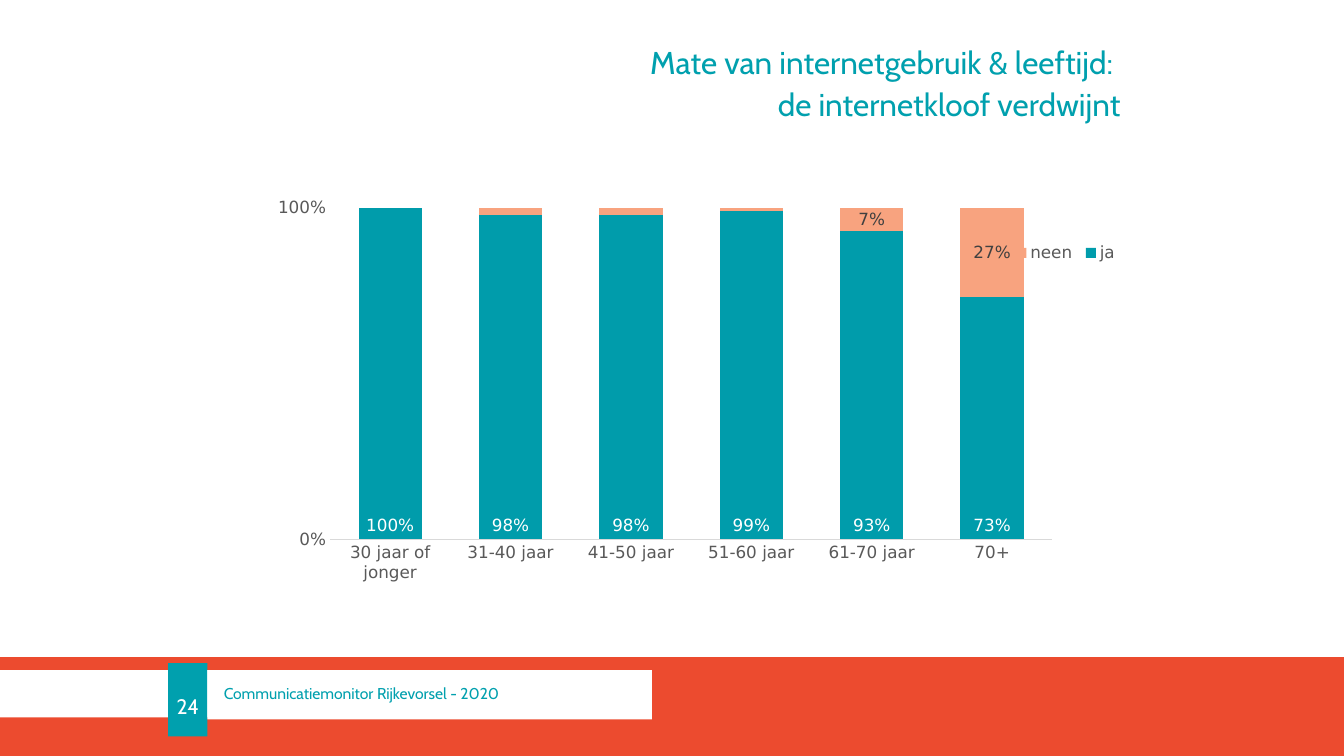
"""Builds the slide on internet use by age group."""
from lxml import etree
from pptx import Presentation
from pptx.chart.data import CategoryChartData
from pptx.dml.color import RGBColor
from pptx.enum.chart import XL_CHART_TYPE as CT, XL_LABEL_POSITION as LP
from pptx.enum.chart import XL_LEGEND_POSITION as LG, XL_TICK_MARK as TM
from pptx.enum.shapes import MSO_SHAPE as SH
from pptx.enum.text import MSO_ANCHOR as MA, PP_ALIGN as PA
from pptx.oxml.ns import qn
from pptx.util import Cm, Pt

TEAL, RED, WHITE, GREY = "00A0AE", "EC4B2F", "FFFFFF", "595959"
PERCENT = "###0%"


def rgb(value):
    return RGBColor.from_string(value)


def assign(target, values):
    for name, value in values.items():
        setattr(target, name, value)


def sub(parent, tag, **attrs):
    return etree.SubElement(parent, qn(tag), attrs)


class Deck:
    """Holds the style and the current slide."""

    def __init__(self, font, chart_font):
        self.font, self.chart_font = font, chart_font
        self.prs = Presentation()
        assign(self.prs, {"slide_width": Cm(33.87), "slide_height": Cm(19.05)})
        self.s = self.prs.slides.add_slide(self.prs.slide_layouts[6])

    def style(self, font, size, color, name=None):
        assign(font, {"size": Pt(size), "name": name or self.font, "bold": False})
        font.color.rgb = rgb(color)

    def fill_text(self, sp, lines, size, color, insets, anchor, wrap=True, **fmt):
        tf = sp.text_frame
        sides = ("margin_left", "margin_top", "margin_right", "margin_bottom")
        assign(tf, {side: Cm(v) for side, v in zip(sides, insets)})
        assign(tf, {"word_wrap": wrap, "vertical_anchor": anchor})
        for i, line in enumerate(lines):
            p = tf.add_paragraph() if i else tf.paragraphs[0]
            assign(p, fmt)
            if i:
                p.space_before = Pt(3)
            r = p.add_run()
            r.text = line
            self.style(r.font, size, color)

    def rect(self, box, color):
        sp = self.s.shapes.add_shape(SH.RECTANGLE, *map(Cm, box))
        sp.shadow.inherit = False
        sp.fill.solid()
        sp.fill.fore_color.rgb = rgb(color)
        sp.line.fill.background()
        return sp

    def text(self, box, lines, *args, **fmt):
        sp = self.s.shapes.add_textbox(*map(Cm, box))
        self.fill_text(sp, lines, *args, **fmt)

    def layout(self, parent, box, inner=False):
        for old in parent.findall(qn("c:layout")):
            parent.remove(old)
        lay = etree.Element(qn("c:layout"))
        manual = sub(lay, "c:manualLayout")
        if inner:
            sub(manual, "c:layoutTarget", val="inner")
        for side in "xy":
            sub(manual, f"c:{side}Mode", val="edge")
        for side, value in zip("xywh", box):
            sub(manual, f"c:{side}", val=str(value))
        parent.insert(0 if inner else 1, lay)

    def series(self, ser, color, label_color, position, hidden):
        ser.format.fill.solid()
        ser.format.fill.fore_color.rgb = rgb(color)
        labels = ser.data_labels
        assign(labels, {"show_value": True, "number_format": PERCENT,
                        "number_format_is_linked": False, "position": position})
        self.style(labels.font, 12, label_color, self.chart_font)
        for idx in hidden:
            label = etree.Element(qn("c:dLbl"))
            sub(label, "c:idx", val=str(idx))
            sub(label, "c:delete", val="1")
            labels._element.insert(idx, label)

    def chart(self, box, cats, series, plot_box, legend_box):
        data = CategoryChartData(number_format=PERCENT)
        data.categories = cats
        for name, values, *_ in series:
            data.add_series(name, values)
        ch = self.s.shapes.add_chart(
            CT.COLUMN_STACKED_100, *map(Cm, box), data).chart
        self.style(ch.font, 10, "000000", self.chart_font)
        assign(ch, {"has_title": False, "has_legend": True})
        assign(ch.legend, {"position": LG.RIGHT, "include_in_layout": True})
        plot = ch.plots[0]
        assign(plot, {"gap_width": 90, "overlap": 100, "vary_by_categories": False})
        for ser, (_, _, *look) in zip(plot.series, series):
            self.series(ser, *look)
        cat, val = ch.category_axis, ch.value_axis
        assign(val, {"minimum_scale": 0, "maximum_scale": 1, "major_unit": 1})
        assign(val.tick_labels, {"number_format": PERCENT,
                                 "number_format_is_linked": False})
        for axis in (cat, val):
            assign(axis, {"major_tick_mark": TM.NONE, "minor_tick_mark": TM.NONE,
                          "has_major_gridlines": False})
        for part in (cat.tick_labels, val.tick_labels, ch.legend):
            self.style(part.font, 12, GREY, self.chart_font)
        cat.format.line.color.rgb = rgb("D9D9D9")
        cat.format.line.width = Pt(0.75)
        val.format.line.fill.background()
        self.layout(plot._element.getparent(), plot_box, inner=True)
        self.layout(ch.legend._element, legend_box)


def main():
    d = Deck("Cabin", "DejaVu Sans")
    d.rect((0, 16.56, 33.87, 2.49), RED)
    d.rect((0, 16.89, 7.34, 1.19), WHITE)
    d.text((12.34, 0.48, 17.09, 3.13),
           ["Mate van internetgebruik & leeftijd: ", "de internetkloof verdwijnt"],
           22.5, TEAL, (1.19, 0.71, 1.19, 0.41), MA.TOP,
           alignment=PA.RIGHT, line_spacing=0.9, space_after=Pt(3))
    yes = [1, 0.98, 0.98, 0.99, 0.93, 0.73]
    no = [round(1 - v, 2) for v in yes]
    d.chart((6.32, 3.89, 22.2, 11.28),
            ["30 jaar of jonger", "31-40 jaar", "41-50 jaar",
             "51-60 jaar", "61-70 jaar", "70+"],
            [("ja", yes, "009CAB", WHITE, LP.INSIDE_BASE, ()),
             ("neen", no, "F8A37F", "404040", LP.CENTER, range(4))],
            (0.09, 0.12, 0.82, 0.74), (0.86, 0.18, 0.13, 0.08))
    d.fill_text(d.rect((4.24, 16.71, 0.99, 1.85), TEAL), ["24"], 15, WHITE,
                (0, 0.3, 0, 0), MA.MIDDLE, wrap=False, alignment=PA.CENTER)
    d.fill_text(d.rect((5.23, 16.89, 11.2, 1.24), WHITE),
                ["Communicatiemonitor Rijkevorsel - 2020"], 11.2, TEAL,
                (0.41, 0, 0.41, 0), MA.MIDDLE, alignment=PA.LEFT, line_spacing=0.9)
    d.prs.save("out.pptx")


if __name__ == "__main__":
    main()
